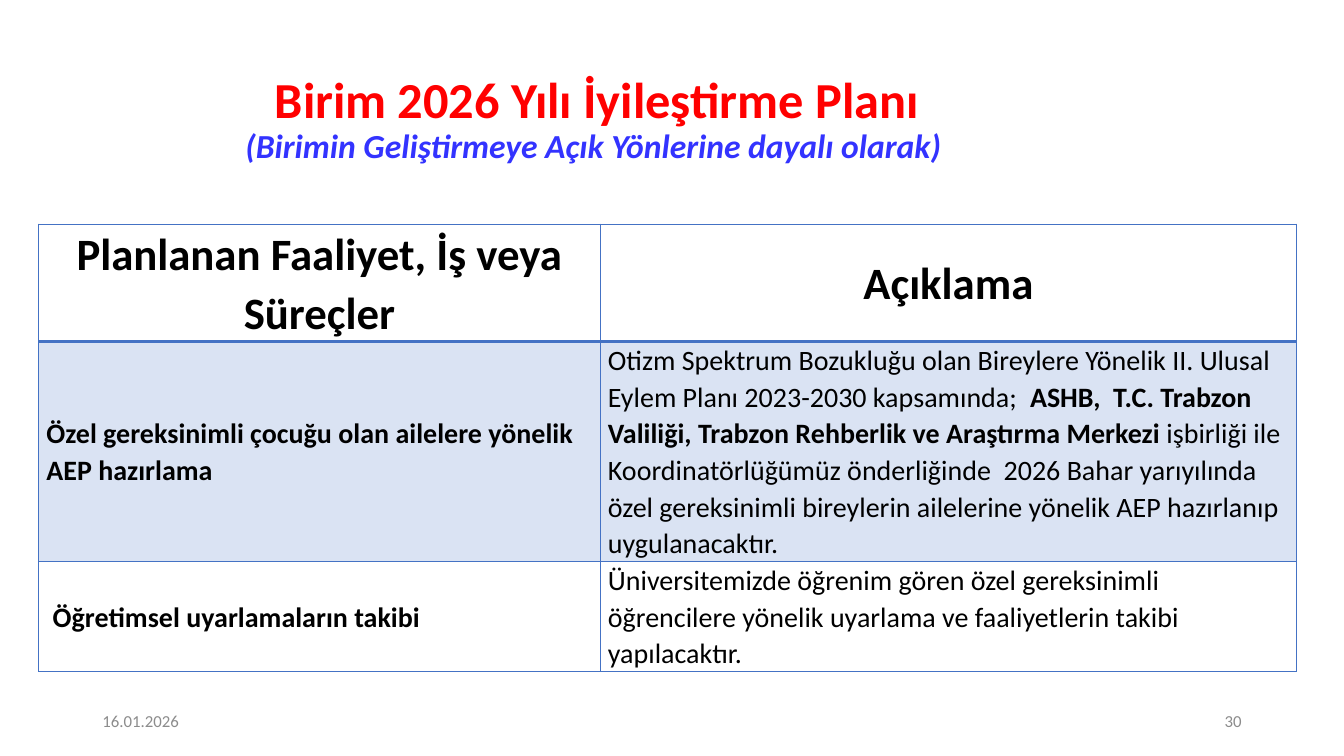
from dataclasses import dataclass

from lxml.etree import SubElement
from pptx import Presentation
from pptx.dml.color import RGBColor as RGB
from pptx.enum.text import MSO_ANCHOR as Anchor, PP_ALIGN as Align
from pptx.oxml.ns import qn
from pptx.util import Cm, Pt


@dataclass(frozen=True)
class Theme:
    font: str = "Calibri"
    red: str = "FF0000"
    blue: str = "3333FF"
    black: str = "000000"
    grey: str = "8C8C8C"
    line: str = "4472C4"
    band: str = "DAE3F3"
    white: str = "FFFFFF"
    title: int = 36
    sub: int = 24
    head: int = 32
    body: int = 20
    foot: int = 12


T = Theme()

HEADS = ["Planlanan Faaliyet, İş veya Süreçler", "Açıklama"]
PLANS = [
    ("Özel gereksinimli çocuğu olan ailelere yönelik AEP hazırlama",
     [("Otizm Spektrum Bozukluğu olan Bireylere Yönelik II. Ulusal Eylem Planı "
       "2023-2030 kapsamında;  ", False),
      ("ASHB,  T.C. Trabzon Valiliği, Trabzon Rehberlik ve Araştırma Merkezi ", True),
      ("işbirliği ile Koordinatörlüğümüz önderliğinde  2026 Bahar yarıyılında "
       "özel gereksinimli bireylerin ailelerine yönelik AEP hazırlanıp "
       "uygulanacaktır.", False)]),
    ("\u00a0Öğretimsel uyarlamaların takibi",
     [("Üniversitemizde öğrenim gören özel gereksinimli öğrencilere yönelik "
       "uyarlama ve faaliyetlerin takibi yapılacaktır.", False)]),
]


def write(para, text, size=T.body, color=T.black, bold=False, italic=False):
    """Add one formatted run to a paragraph."""
    run = para.add_run()
    run.text = text
    font = run.font
    font.name, font.size = T.font, Pt(size)
    font.bold, font.italic = bold, italic
    font.color.rgb = RGB.from_string(color)


def add_box(slide, box, align, spacing=1.0):
    """Add a middle-anchored text box and return its paragraph."""
    frame = slide.shapes.add_textbox(*map(Cm, box)).text_frame
    frame.word_wrap = True
    frame.vertical_anchor = Anchor.MIDDLE
    para = frame.paragraphs[0]
    para.alignment, para.line_spacing = align, spacing
    return para


def add_title(slide, box):
    para = add_box(slide, box, Align.CENTER, 0.9)
    write(para, "Birim 2026 Yılı İyileştirme Planı", T.title, T.red, bold=True)
    para.add_line_break()
    write(para, "(Birimin Geliştirmeye Açık Yönlerine dayalı olarak) ",
          T.sub, T.blue, bold=True, italic=True)


def add_footer(slide, box):
    """Place the date at the left end of the box and the number at the right."""
    left, top, width, height = box
    part = 7.62
    date = add_box(slide, (left, top, part, height), Align.LEFT)
    write(date, "16.01.2026", T.foot, T.grey)
    page = add_box(slide, (left + width - part, top, part, height), Align.RIGHT)
    write(page, "30", T.foot, T.grey)


def set_edges(cell, **widths):
    """Draw the cell borders; widths in points by side L, R, T, B."""
    props = cell._tc.get_or_add_tcPr()
    for side in "LRTB":
        line = SubElement(props, qn(f"a:ln{side}"), w=str(Pt(widths.get(side, 1))))
        fill = SubElement(line, qn("a:solidFill"))
        SubElement(fill, qn("a:srgbClr"), val=T.line)


def style_cell(cell, fill, align, **widths):
    """Format a cell and return its paragraph."""
    set_edges(cell, **widths)
    cell.fill.solid()
    cell.fill.fore_color.rgb = RGB.from_string(fill)
    cell.vertical_anchor = Anchor.MIDDLE
    cell.margin_left = cell.margin_right = Cm(0.19)
    cell.margin_top = cell.margin_bottom = 0
    para = cell.text_frame.paragraphs[0]
    para.alignment, para.line_spacing = align, 1.07
    return para


def add_plan(slide, box):
    left, top, width, height = box
    table = slide.shapes.add_table(len(PLANS) + 1, 2, *map(Cm, box)).table
    table.first_row = table.horz_banding = False
    first = 14.15
    for col, size in zip(table.columns, (first, width - first)):
        col.width = Cm(size)
    tall = (2.95, 5.55)
    for row, size in zip(table.rows, (*tall, height - sum(tall))):
        row.height = Cm(size)

    for col, head in enumerate(HEADS):
        para = style_cell(table.cell(0, col), T.white, Align.CENTER, B=2)
        write(para, head, T.head, bold=True)
    for row, (task, note) in enumerate(PLANS, 1):
        fill = T.band if row % 2 else T.white
        for col, runs in enumerate(([(task, True)], note)):
            para = style_cell(table.cell(row, col), fill, Align.LEFT,
                              T=2 if row == 1 else 1)
            for text, bold in runs:
                write(para, text, bold=bold)


def main():
    deck = Presentation()
    deck.slide_width, deck.slide_height = Cm(33.87), Cm(19.05)
    slide = deck.slides.add_slide(deck.slide_layouts[6])
    add_title(slide, (0.76, 1.98, 28.58, 2.13))
    add_footer(slide, (2.33, 17.66, 29.21, 1.01))
    add_plan(slide, (0.98, 5.65, 31.7, 11.27))
    deck.save("out.pptx")


if __name__ == "__main__":
    main()
